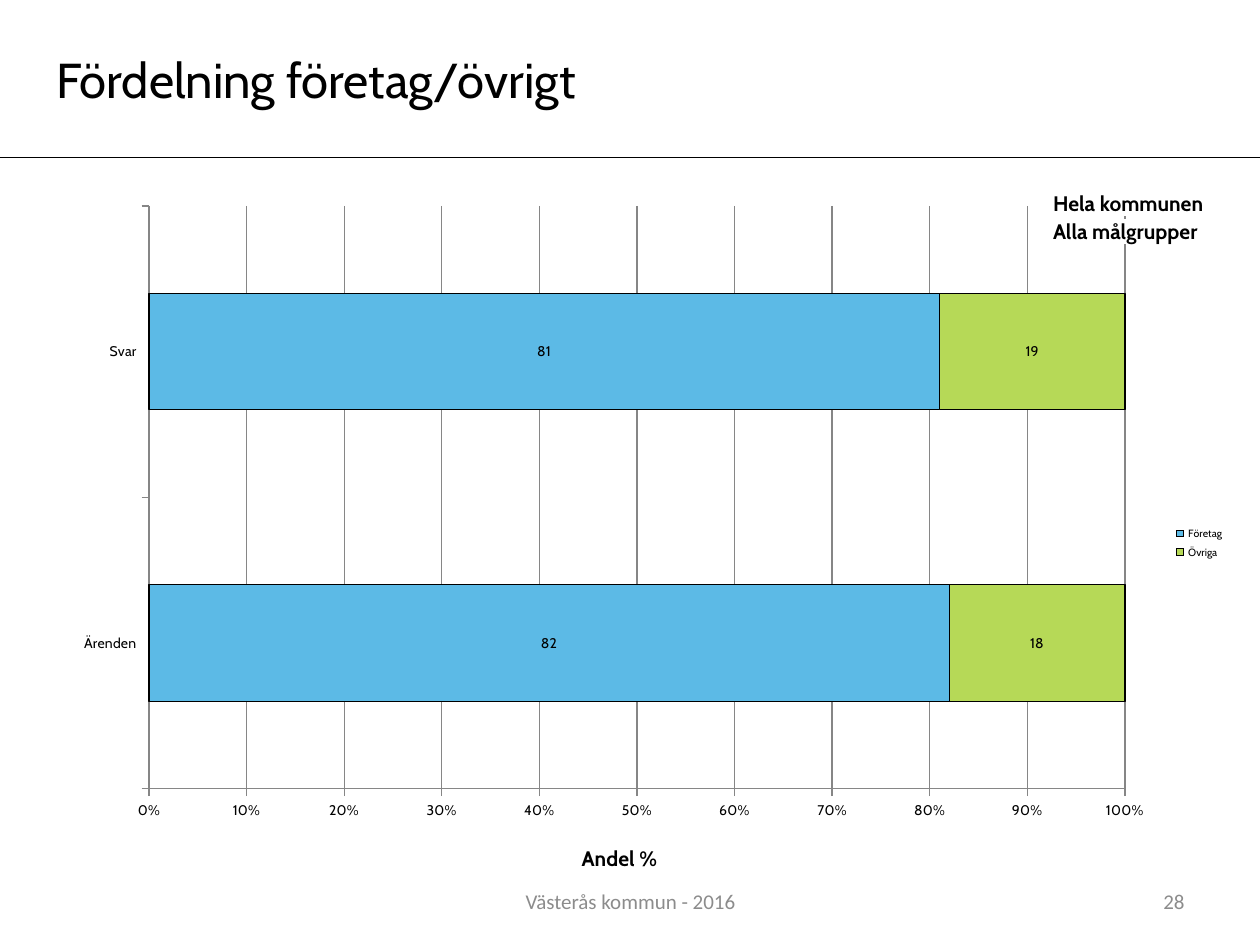
from lxml import etree
from pptx import Presentation
from pptx import util as u
from pptx.chart.data import CategoryChartData
from pptx.dml.color import RGBColor
from pptx.enum import chart as ch, shapes, text
from pptx.oxml import parse_xml
from pptx.oxml.ns import nsdecls, qn

BLACK, WHITE, GREY, GRID = "000000", "FFFFFF", "8C8C8C", "868686"


def rgb(value):
    return RGBColor.from_string(value)


def place(element, x, y, w=None, h=None, inner=False):
    """Give a chart part a manual layout in fractions of the chart."""
    sizes = [("w", w), ("h", h)] if w else []
    parts = '<c:layoutTarget val="inner"/>' if inner else ""
    parts += '<c:xMode val="edge"/><c:yMode val="edge"/>'
    parts += "".join(f'<c:{k} val="{v}"/>' for k, v in [("x", x), ("y", y), *sizes])
    for old in element.findall(qn("c:layout")):
        element.remove(old)
    layout = parse_xml(f'<c:layout {nsdecls("c")}><c:manualLayout>{parts}'
                       '</c:manualLayout></c:layout>')
    before = [e for e in element if e.tag in (qn("c:tx"), qn("c:legendPos"))]
    element.insert(element.index(before[-1]) + 1 if before else 0, layout)


class SlideBuilder:
    heading_font, footer_font = "Cabin", "Calibri"

    def __init__(self, slide):
        self.slide = slide

    def style(self, font, size, color=BLACK, bold=False, name=None):
        font.name = name or self.heading_font
        font.size = u.Pt(size)
        font.bold = bold
        font.color.rgb = rgb(color)

    def footer(self, wording, left, width, align):
        box = self.slide.shapes.add_textbox(
            u.Inches(left), u.Inches(6.95), u.Inches(width), u.Inches(0.4))
        frame = box.text_frame
        frame.word_wrap = True
        frame.vertical_anchor = text.MSO_ANCHOR.MIDDLE
        frame.text = wording
        frame.paragraphs[0].alignment = align
        self.style(frame.paragraphs[0].runs[0].font, 12, GREY, name=self.footer_font)

    def label(self, wording, left, top, width, height, size, bold=False, indent=0):
        box = self.slide.shapes.add_shape(
            shapes.MSO_SHAPE.RECTANGLE, u.Inches(left), u.Inches(top),
            u.Inches(width), u.Inches(height))
        box.shadow.inherit = False
        box.fill.solid()
        box.fill.fore_color.rgb = rgb(WHITE)
        box.line.color.rgb = rgb(WHITE)
        box.line.width = u.Pt(2)
        frame = box.text_frame
        frame.vertical_anchor = text.MSO_ANCHOR.MIDDLE
        frame.text = wording
        paragraph = frame.paragraphs[0]
        paragraph.alignment = text.PP_ALIGN.LEFT
        if indent:
            paragraph._p.get_or_add_pPr().set("indent", str(u.Inches(indent)))
        self.style(paragraph.runs[0].font, size, bold=bold)

    def rule(self, y):
        line = self.slide.shapes.add_connector(
            shapes.MSO_CONNECTOR.STRAIGHT, 0, u.Inches(y), u.Inches(10), u.Inches(y))
        line.line.color.rgb = rgb(BLACK)
        line.line.width = u.Pt(0.75)
        etree.SubElement(line._element.spPr, qn("a:effectLst"))

    def share_chart(self, categories, series, axis_title):
        data = CategoryChartData()
        data.categories = categories
        for name, values, _ in series:
            data.add_series(name, values)
        chart = self.slide.shapes.add_chart(
            ch.XL_CHART_TYPE.BAR_STACKED_100, u.Inches(0.49), u.Inches(1.53),
            u.Inches(9.31), u.Inches(5.56), data).chart
        self.style(chart.font, 18, name=self.footer_font)
        chart.has_title = False

        plot = chart.plots[0]
        plot.gap_width, plot.overlap = 150, 100
        plot.vary_by_categories = False
        for bar, (_, _, color) in zip(plot.series, series):
            bar.format.fill.solid()
            bar.format.fill.fore_color.rgb = rgb(color)
            bar.format.line.color.rgb = rgb(BLACK)
            bar.format.line.width = u.Pt(0.75)
            bar.data_labels.show_value = True
            self.style(bar.data_labels.font, 8)

        shares = chart.value_axis
        for axis in (chart.category_axis, shares):
            axis.major_tick_mark = ch.XL_TICK_MARK.OUTSIDE
            axis.minor_tick_mark = ch.XL_TICK_MARK.NONE
            axis.format.line.color.rgb = rgb(GRID)
            self.style(axis.tick_labels.font, 8)
        shares.minimum_scale, shares.maximum_scale, shares.major_unit = 0, 1, 0.1
        shares.tick_labels.number_format = "0%"
        shares.tick_labels.number_format_is_linked = False
        shares.has_major_gridlines = True
        shares.major_gridlines.format.line.color.rgb = rgb(GRID)
        shares.has_title = True
        title = shares.axis_title
        title.text_frame.text = axis_title
        self.style(title.text_frame.paragraphs[0].runs[0].font, 12, bold=True)

        chart.has_legend = True
        legend = chart.legend
        legend.position = ch.XL_LEGEND_POSITION.RIGHT
        legend.include_in_layout = False
        self.style(legend.font, 6)

        place(chart._chartSpace.chart.plotArea, 0.0744, 0.0188, 0.832, 0.832, inner=True)
        place(title._element, 0.44, 0.925)
        place(legend._element, 0.94, 0.47, 0.06, 0.06)


def main():
    deck = Presentation()
    deck.slide_width, deck.slide_height = u.Inches(10), u.Inches(7.5)
    page = SlideBuilder(deck.slides.add_slide(deck.slide_layouts[6]))

    page.footer("Västerås kommun - 2016", 3.42, 3.17, text.PP_ALIGN.CENTER)
    page.footer("28", 7.17, 2.33, text.PP_ALIGN.RIGHT)
    page.share_chart(
        ["Ärenden", "Svar"],
        [("Företag", (82, 81), "5CBAE6"), ("Övriga", (18, 19), "B6D957")],
        "Andel %")
    for row, scope in enumerate(["Hela kommunen", "Alla målgrupper"]):
        page.label(scope, 8.26, 1.53 + 0.22 * row, 1.67, 0.17, 12, bold=True)
    page.rule(1.25)
    page.label("Fördelning företag/övrigt", 0.07, 0.43, 6, 0.39, 28, indent=0.28)

    deck.save("out.pptx")


if __name__ == "__main__":
    main()
